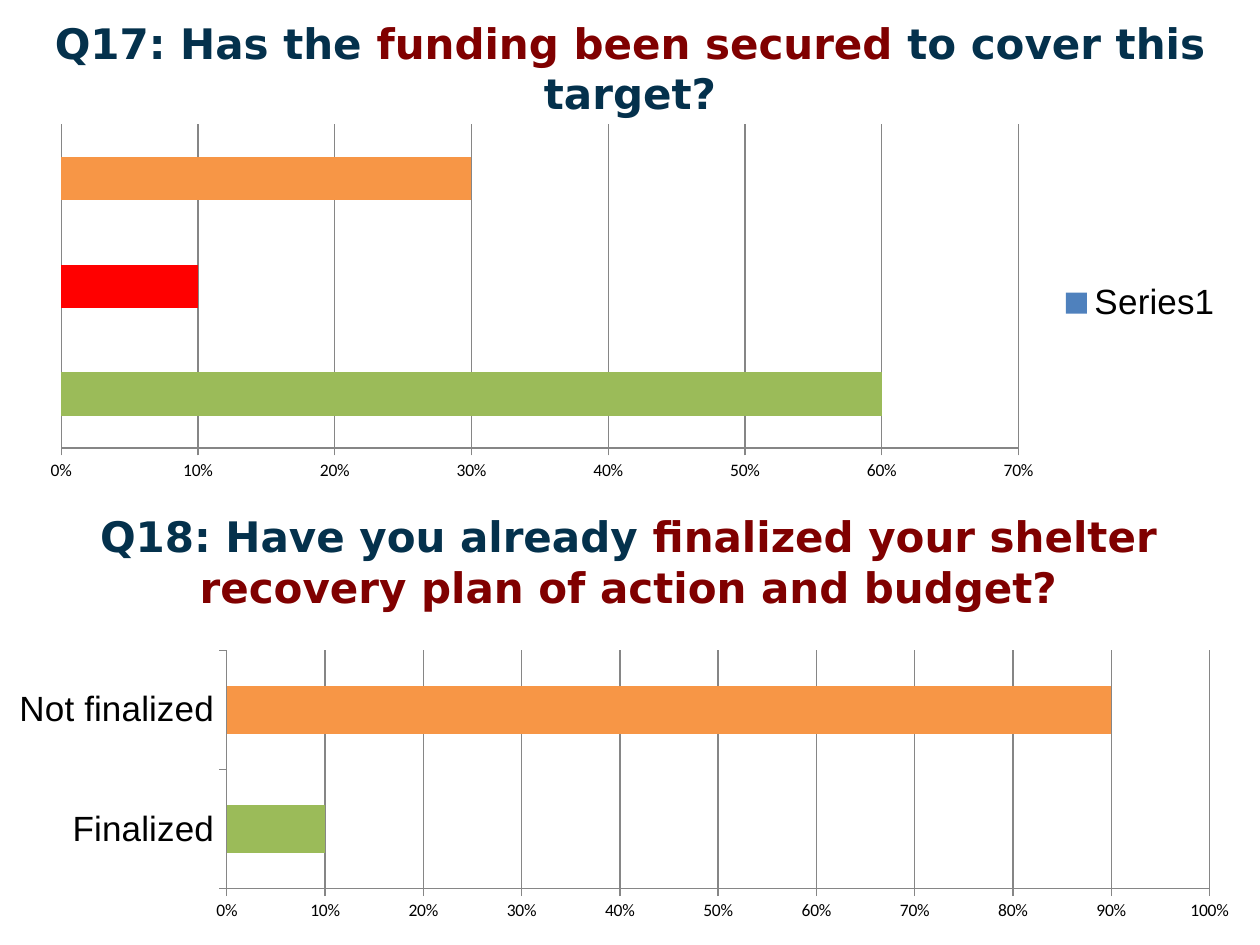
from dataclasses import dataclass

import pptx
import pptx.chart.data
import pptx.dml.color
import pptx.enum.chart
import pptx.enum.text
import pptx.oxml
import pptx.oxml.ns
import pptx.util
from pptx.util import Cm


@dataclass(frozen=True)
class Theme:
    navy: str = "04314C"
    maroon: str = "800000"
    black: str = "000000"
    grid: str = "868686"
    blue: str = "4F81BD"
    green: str = "9BBB59"
    red: str = "FF0000"
    orange: str = "F79646"
    title_font: str = "DejaVu Sans"
    axis_font: str = "Calibri"
    label_font: str = "Arial"
    title_size: int = 24
    axis_size: int = 10
    label_size: int = 20


THEME = Theme()


def rgb(color):
    return pptx.dml.color.RGBColor.from_string(color)


def style_font(font, *, name, size, color=THEME.black, bold=False):
    font.name = name
    font.size = pptx.util.Pt(size)
    font.bold = bold
    font.color.rgb = rgb(color)


def add_text(paragraph, text, **font_format):
    run = paragraph.add_run()
    run.text = text
    style_font(run.font, **font_format)


def add_question(slide, left, top, phrases):
    """Add a centred heading from (text, colour) phrases."""
    frame = slide.shapes.add_textbox(left, top, Cm(25.4), Cm(2)).text_frame
    frame.word_wrap = True
    frame.vertical_anchor = pptx.enum.text.MSO_ANCHOR.MIDDLE
    heading = frame.paragraphs[0]
    heading.alignment = pptx.enum.text.PP_ALIGN.CENTER
    for text, color in phrases:
        add_text(heading, text, name=THEME.title_font, size=THEME.title_size,
                 color=color, bold=True)


def place_plot(chart, **fractions):
    """Fix the inner plot area to fractions x, y, w, h of the chart."""
    namespace = pptx.oxml.ns.nsdecls("c")
    values = "".join(f'<c:{key} val="{value}"/>' for key, value in fractions.items())
    layout = pptx.oxml.parse_xml(
        f'<c:layout {namespace}><c:manualLayout><c:layoutTarget val="inner"/>'
        f'<c:xMode val="edge"/><c:yMode val="edge"/>{values}'
        "</c:manualLayout></c:layout>")
    plot_area = chart.element.find(".//" + pptx.oxml.ns.qn("c:plotArea"))
    for automatic in plot_area.findall(pptx.oxml.ns.qn("c:layout")):
        plot_area.remove(automatic)
    plot_area.insert(0, layout)


def style_axes(chart, maximum):
    outside = pptx.enum.chart.XL_TICK_MARK.OUTSIDE
    shares, answers = chart.value_axis, chart.category_axis
    shares.minimum_scale = 0
    shares.maximum_scale = maximum
    shares.major_unit = 0.1
    shares.has_major_gridlines = True
    shares.tick_labels.number_format = "0%"
    shares.tick_labels.number_format_is_linked = False
    style_font(answers.tick_labels.font, name=THEME.label_font, size=THEME.label_size)
    for axis in (shares, answers):
        axis.major_tick_mark = outside
    for line in (shares.format.line, answers.format.line,
                 shares.major_gridlines.format.line):
        line.color.rgb = rgb(THEME.grid)
        line.width = pptx.util.Pt(0.75)


def add_bars(slide, box, series_name, answers, maximum, base_color):
    """Add a bar chart of (answer, share, colour) rows, lowest bar first."""
    data = pptx.chart.data.CategoryChartData(number_format="0%")
    data.categories = [answer for answer, _, _ in answers]
    data.add_series(series_name, [share for _, share, _ in answers])
    chart = slide.shapes.add_chart(
        pptx.enum.chart.XL_CHART_TYPE.BAR_CLUSTERED, *box, data).chart
    chart.has_title = False
    chart.has_legend = False
    style_font(chart.font, name=THEME.axis_font, size=THEME.axis_size)
    style_axes(chart, maximum)

    plot = chart.plots[0]
    plot.gap_width = 150
    plot.vary_by_categories = False
    bars = plot.series[0]
    bars.format.fill.solid()
    bars.format.fill.fore_color.rgb = rgb(base_color)
    for index, (_, _, color) in enumerate(answers):
        fill = bars.points[index].format.fill
        fill.solid()
        fill.fore_color.rgb = rgb(color)
    return chart


def add_legend(chart):
    chart.has_legend = True
    chart.legend.position = pptx.enum.chart.XL_LEGEND_POSITION.RIGHT
    chart.legend.include_in_layout = False
    style_font(chart.legend.font, name=THEME.label_font, size=THEME.label_size)


def main():
    deck = pptx.Presentation()
    deck.slide_width, deck.slide_height = Cm(25.4), Cm(19.05)
    slide = deck.slides.add_slide(deck.slide_layouts[6])

    add_question(slide, Cm(0), Cm(0.36), [
        ("Q17: Has the ", THEME.navy),
        ("funding been secured ", THEME.maroon),
        ("to cover this target?", THEME.navy)])
    funding = add_bars(
        slide, (Cm(0.5), Cm(2.36), Cm(24.43), Cm(7.5)), "Series1",
        [("1", 0.6, THEME.green), ("2", 0.1, THEME.red), ("3", 0.3, THEME.orange)],
        maximum=0.7, base_color=THEME.blue)
    funding.category_axis.visible = False
    add_legend(funding)
    place_plot(funding, x=0.03, y=0.02, w=0.79, h=0.87)

    add_question(slide, Cm(-0.03), Cm(10.31), [
        ("Q18: Have you already ", THEME.navy),
        ("finalized your shelter recovery plan of action and budget?", THEME.maroon)])
    plan = add_bars(
        slide, (Cm(0), Cm(13), Cm(25.4), Cm(5.72)), "Series 1",
        [("Finalized", 0.1, THEME.green), ("Not finalized", 0.9, THEME.orange)],
        maximum=1, base_color=THEME.green)
    place_plot(plan, x=0.18, y=0.02, w=0.78, h=0.84)

    deck.save("out.pptx")


if __name__ == "__main__":
    main()
